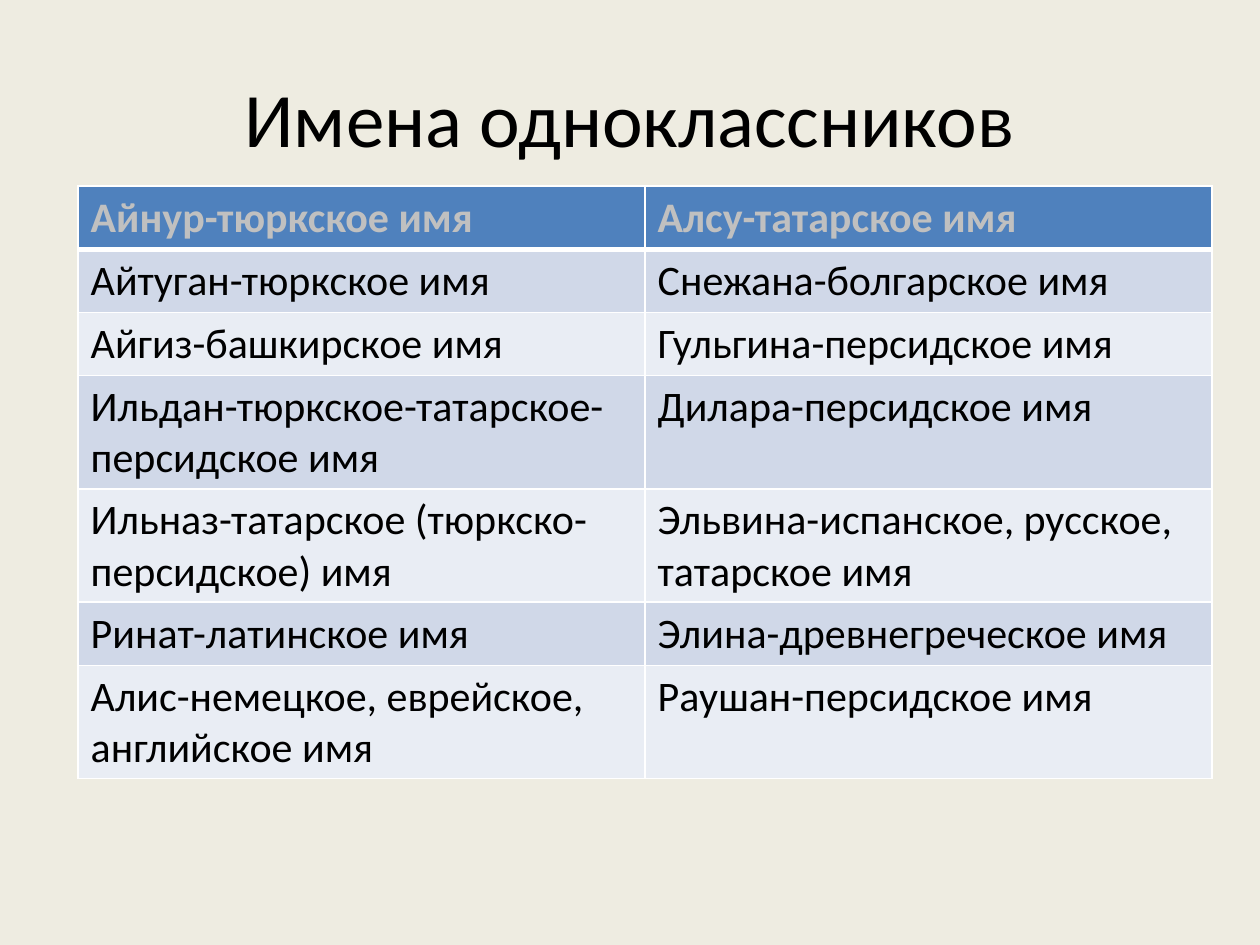
from lxml.etree import SubElement
from pptx import Presentation
from pptx.dml.color import RGBColor
from pptx.enum.text import MSO_ANCHOR, PP_ALIGN
from pptx.oxml.ns import qn
from pptx.util import Inches, Pt

W, H = 10, 7.5
HEADER, BANDS = "4F81BD", ("E9EDF4", "D0D8E8")
TITLE = {"size": Pt(44), "name": "Calibri", "bold": False}
BODY = {"size": Pt(24), "name": "Calibri", "bold": False}
HEAD = {**BODY, "bold": True}
NAMES = [
    ("Айнур-тюркское имя", "Алсу-татарское имя"),
    ("Айтуган-тюркское имя", "Снежана-болгарское имя"),
    ("Айгиз-башкирское имя", "Гульгина-персидское имя"),
    ("Ильдан-тюркское-татарское-персидское имя", "Дилара-персидское имя"),
    ("Ильназ-татарское (тюркско-персидское) имя",
     "Эльвина-испанское, русское, татарское имя"),
    ("Ринат-латинское имя", "Элина-древнегреческое имя"),
    ("Алис-немецкое, еврейское, английское имя", "Раушан-персидское имя"),
]


def paint(color_format, color):
    color_format.rgb = RGBColor.from_string(color)


def write(tf, text, style, color):
    p = tf.paragraphs[0]
    r = p.add_run()
    r.text = text
    for key, value in style.items():
        setattr(r.font, key, value)
    paint(r.font.color, color)
    return p


def set_borders(cell, color, bottom):
    # Borders come before the fill in the cell properties
    tc_pr = cell._tc.get_or_add_tcPr()
    for side, width in {"L": 1, "R": 1, "T": 1, "B": bottom}.items():
        ln = SubElement(tc_pr, qn(f"a:ln{side}"), w=str(Pt(width)))
        SubElement(SubElement(ln, qn("a:solidFill")), qn("a:srgbClr"), val=color)


def add_title(s, box, text):
    tf = s.shapes.add_textbox(*map(Inches, box)).text_frame
    tf.word_wrap = True
    tf.vertical_anchor = MSO_ANCHOR.MIDDLE
    write(tf, text, TITLE, "000000").alignment = PP_ALIGN.CENTER


def add_names(s, box, rows):
    table = s.shapes.add_table(len(rows), len(rows[0]), *map(Inches, box)).table
    for i, row in enumerate(rows):
        for j, text in enumerate(row):
            cell = table.cell(i, j)
            # The rule under the header is thicker; both rows sharing an edge agree
            set_borders(cell, "FFFFFF", 3 if i == 0 else 1)
            if i == 1:
                cell._tc.tcPr.find(qn("a:lnT")).set("w", str(Pt(3)))
            cell.fill.solid()
            paint(cell.fill.fore_color, BANDS[i % 2] if i else HEADER)
            write(cell.text_frame, text, BODY if i else HEAD,
                  "000000" if i else "C0C0C0")


def main():
    prs = Presentation()
    prs.slide_width, prs.slide_height = Inches(W), Inches(H)
    s = prs.slides.add_slide(prs.slide_layouts[6])
    s.background.fill.solid()
    paint(s.background.fill.fore_color, "EEECE1")
    # Title band, then the table; rows grow to fit their text
    add_title(s, (0.05 * W, 0.04 * H, 0.9 * W, H / 6), "Имена одноклассников")
    add_names(s, (0.062 * W, 0.197 * H, 0.9 * W, 0.38 * H), NAMES)
    prs.save("out.pptx")


if __name__ == "__main__":
    main()
